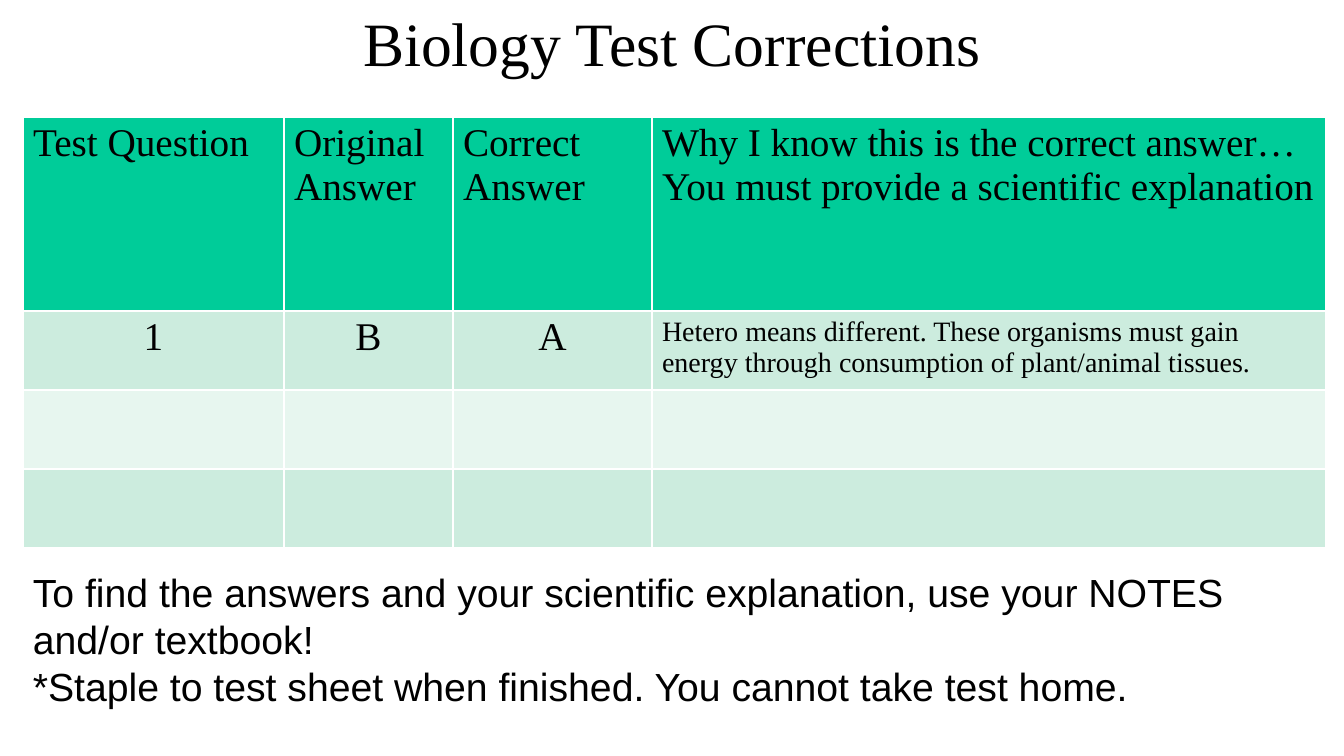
"""Build the biology test corrections slide."""
from dataclasses import dataclass

from lxml import etree
from pptx import Presentation
from pptx import util as u
from pptx.dml.color import RGBColor
from pptx.enum import text
from pptx.oxml import ns

W, H = 1344, 756
SCALE = 12192000 / W


@dataclass(frozen=True)
class Theme:
    """Colours, fonts and type sizes of the slide."""
    ink: str = "000000"
    header: str = "00CC99"
    band: str = "CCECDE"
    pale: str = "E7F6EF"
    rule: str = "FFFFFF"
    serif: str = "Times New Roman"
    sans: str = "Arial"
    title: int = 44
    body: int = 28
    small: int = 20


T = Theme()
COLS = (261, 169, 199, 674)
ROWS = (194, 79, 79, 79)
HEADERS = (
    "Test Question",
    "Original Answer",
    "Correct Answer",
    "Why I know this is the correct answer…You must provide a scientific explanation",
)
EXAMPLE = (
    "1",
    "B",
    "A",
    "Hetero means different. These organisms must gain energy through "
    "consumption of plant/animal tissues.",
)
NOTES = (
    "To find the answers and your scientific explanation, use your NOTES and/or textbook!",
    "*Staple to test sheet when finished. You cannot take test home.",
)


def px(n):
    """Turn px into EMU."""
    return u.Emu(round(n * SCALE))


def add_run(p, words, size, face, align=text.PP_ALIGN.LEFT):
    """Add one formatted run to a paragraph."""
    p.alignment = align
    r = p.add_run()
    r.text = words
    r.font.size = u.Pt(size)
    r.font.name = face
    r.font.bold = False
    r.font.color.rgb = RGBColor.from_string(T.ink)


def style_cell(cell, colour):
    """Give a cell its white rules and its fill."""
    tcPr = cell._tc.get_or_add_tcPr()
    for side in ("lnL", "lnR", "lnT", "lnB"):
        ln = etree.SubElement(tcPr, ns.qn(f"a:{side}"), w=str(u.Pt(1)))
        fill = etree.SubElement(ln, ns.qn("a:solidFill"))
        etree.SubElement(fill, ns.qn("a:srgbClr"), val=T.rule)
    cell.fill.solid()
    cell.fill.fore_color.rgb = RGBColor.from_string(colour)


def add_title(s, x, y, w, h):
    """Place the slide title in its placeholder."""
    sp = s.shapes.title
    sp.left, sp.top, sp.width, sp.height = px(x), px(y), px(w), px(h)
    tf = sp.text_frame
    tf.auto_size = text.MSO_AUTO_SIZE.NONE
    tf.vertical_anchor = text.MSO_ANCHOR.MIDDLE
    add_run(tf.paragraphs[0], "Biology Test Corrections", T.title, T.serif,
            text.PP_ALIGN.CENTER)


def add_corrections(s, x, y):
    """Place the corrections table with its worked example row."""
    tbl = s.shapes.add_table(len(ROWS), len(COLS), px(x), px(y),
                             px(sum(COLS)), px(sum(ROWS))).table
    tbl.first_row = tbl.horz_banding = False
    for col, w in zip(tbl.columns, COLS):
        col.width = px(w)
    for row, h, colour in zip(tbl.rows, ROWS, (T.header, T.band, T.pale, T.band)):
        row.height = px(h)
        for cell in row.cells:
            style_cell(cell, colour)
    last = len(COLS) - 1
    for i, (head, answer) in enumerate(zip(HEADERS, EXAMPLE)):
        add_run(tbl.cell(0, i).text_frame.paragraphs[0], head, T.body, T.serif)
        size = T.small if i == last else T.body
        align = text.PP_ALIGN.LEFT if i == last else text.PP_ALIGN.CENTER
        add_run(tbl.cell(1, i).text_frame.paragraphs[0], answer, size, T.serif, align)


def add_notes(s, x, y, w, h):
    """Place the instructions below the table."""
    tf = s.shapes.add_textbox(px(x), px(y), px(w), px(h)).text_frame
    tf.word_wrap = True
    tf.auto_size = text.MSO_AUTO_SIZE.SHAPE_TO_FIT_TEXT
    for i, words in enumerate(NOTES):
        p = tf.add_paragraph() if i else tf.paragraphs[0]
        add_run(p, words, T.body, T.sans)


def main():
    """Build and save the presentation."""
    prs = Presentation()
    prs.slide_width, prs.slide_height = px(W), px(H)
    s = prs.slides.add_slide(prs.slide_layouts[5])
    add_title(s, 101, 17, 1142, 50)
    add_corrections(s, 23, 117)
    add_notes(s, 23, 563, 1290, 152)
    prs.save("out.pptx")


if __name__ == "__main__":
    main()
